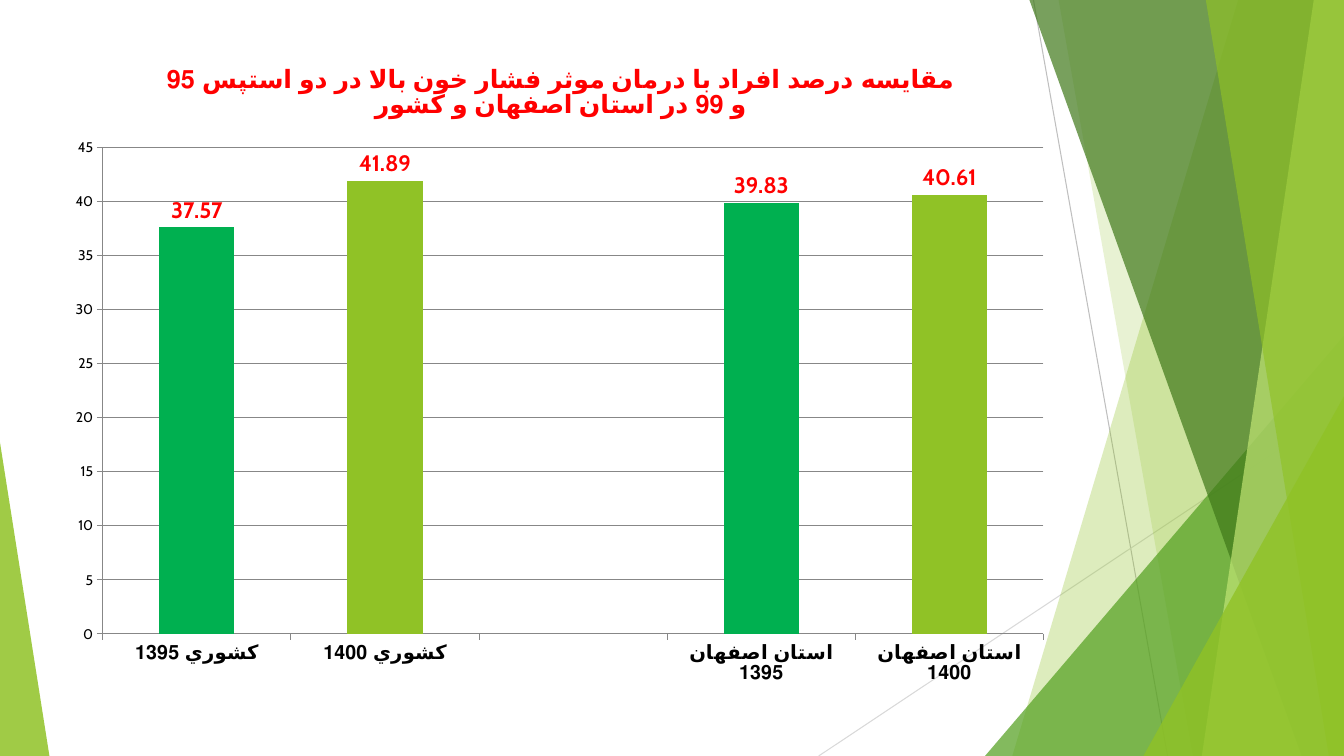
from lxml import etree
from pptx import Presentation
from pptx import util as u
from pptx.chart.data import CategoryChartData
from pptx.dml.color import RGBColor
from pptx.enum import chart as charts, shapes
from pptx.oxml import parse_xml
from pptx.oxml.ns import nsdecls, qn

LIME = RGBColor(0x90, 0xC2, 0x26)
PALE_LIME = RGBColor(0xC0, 0xE4, 0x74)
LEAF = RGBColor(0x54, 0xA0, 0x21)
DARK_LEAF = RGBColor(0x3F, 0x78, 0x19)
GREEN = RGBColor(0x00, 0xB0, 0x50)
RED = RGBColor(0xFF, 0x00, 0x00)
BLACK = RGBColor(0x00, 0x00, 0x00)
AXIS_GRAY = RGBColor(0x87, 0x87, 0x87)
GRAY = RGBColor(0xBF, 0xBF, 0xBF)
LIGHT_GRAY = RGBColor(0xD9, 0xD9, 0xD9)
FONT = "Cabin"
WIDTH, HEIGHT = 13.33, 7.5

TITLE = "مقايسه درصد افراد با درمان موثر فشار خون بالا در دو استپس 95 و 99 در استان اصفهان و کشور"
RATES = {
    "کشوري 1395": 37.57,
    "کشوري 1400": 41.89,
    "": None,
    "استان اصفهان 1395": 39.83,
    "استان اصفهان 1400": 40.61,
}


def format_font(font, size, color=BLACK, bold=False):
    font.name = FONT
    font.size = u.Pt(size)
    font.bold = bold
    font.color.rgb = color


def write_text(frame, text, **font_format):
    paragraph = frame.paragraphs[0]
    paragraph.text = text
    paragraph._p.get_or_add_pPr().set("rtl", "1")
    format_font(paragraph.runs[0].font, **font_format)


class SlideBuilder:
    def __init__(self, slide):
        self.slide = slide

    def line(self, start, end, color):
        ends = [u.Inches(value) for value in (*start, *end)]
        connector = self.slide.shapes.add_connector(shapes.MSO_CONNECTOR.STRAIGHT, *ends)
        connector.line.color.rgb = color
        connector.line.width = u.Pt(0.75)
        etree.SubElement(connector._element.spPr, qn("a:effectLst"))

    def paint(self, shape, color, opacity):
        shape.shadow.inherit = False
        shape.line.fill.background()
        shape.fill.solid()
        shape.fill.fore_color.rgb = color
        color_element = shape._element.spPr.find(".//" + qn("a:srgbClr"))
        etree.SubElement(color_element, qn("a:alpha")).set("val", str(opacity * 1000))

    def band(self, top_x, bottom_x, color, opacity):
        """Full-height band from a slanted left edge to the right side of the slide."""
        corners = [(top_x, 0), (WIDTH, 0), (WIDTH, HEIGHT), (bottom_x, HEIGHT)]
        first, *others = [(u.Inches(x), u.Inches(y)) for x, y in corners]
        builder = self.slide.shapes.build_freeform(*first)
        builder.add_line_segments(others, close=True)
        self.paint(builder.convert_to_shape(), color, opacity)

    def triangle(self, left, top, width, apex, color, opacity):
        box = [u.Inches(value) for value in (left, top, width, HEIGHT - top)]
        shape = self.slide.shapes.add_shape(shapes.MSO_SHAPE.ISOSCELES_TRIANGLE, *box)
        shape.adjustments[0] = apex
        self.paint(shape, color, opacity)

    def column_chart(self, left, top, width, height, title, rates):
        data = CategoryChartData()
        data.categories = list(rates)
        data.add_series(title, list(rates.values()))
        box = [u.Inches(value) for value in (left, top, width, height)]
        chart = self.slide.shapes.add_chart(
            charts.XL_CHART_TYPE.COLUMN_CLUSTERED, *box, data).chart
        format_font(chart.font, 10)
        chart.has_legend = False
        chart.has_title = True
        chart.chart_title.include_in_layout = False
        write_text(chart.chart_title.text_frame, title, size=18, color=RED, bold=True)
        self.style_axes(chart)
        self.style_columns(chart.plots[0])
        self.place_plot(chart, x=0.046, y=0.16, w=0.933, h=0.743)

    def style_axes(self, chart):
        values = chart.value_axis
        values.minimum_scale, values.maximum_scale, values.major_unit = 0, 45, 5
        values.has_major_gridlines = True
        values.major_gridlines.format.line.color.rgb = AXIS_GRAY
        for axis in (values, chart.category_axis):
            axis.major_tick_mark = charts.XL_TICK_MARK.OUTSIDE
            axis.format.line.color.rgb = AXIS_GRAY
        format_font(values.tick_labels.font, 10)
        format_font(chart.category_axis.tick_labels.font, 14, bold=True)

    def style_columns(self, plot):
        plot.gap_width = 150
        plot.vary_by_categories = False
        series = plot.series[0]
        series.format.fill.solid()
        series.format.fill.fore_color.rgb = LIME
        for index in (0, 3):
            fill = series.points[index].format.fill
            fill.solid()
            fill.fore_color.rgb = GREEN
        labels = series.data_labels
        labels.show_value = True
        labels.position = charts.XL_LABEL_POSITION.OUTSIDE_END
        format_font(labels.font, 16, RED, bold=True)

    def place_plot(self, chart, **fractions):
        area = chart._chartSpace.chart.plotArea
        for layout in area.findall(qn("c:layout")):
            area.remove(layout)
        sizes = "".join(f'<c:{key} val="{value}"/>' for key, value in fractions.items())
        area.insert(0, parse_xml(
            f'<c:layout {nsdecls("c")}><c:manualLayout><c:layoutTarget val="inner"/>'
            f'<c:xMode val="edge"/><c:yMode val="edge"/>{sizes}</c:manualLayout></c:layout>'))


def main():
    presentation = Presentation()
    presentation.slide_width = u.Inches(WIDTH)
    presentation.slide_height = u.Inches(HEIGHT)
    builder = SlideBuilder(presentation.slides.add_slide(presentation.slide_layouts[6]))

    # Thin lines behind the facets
    builder.line((10.25, 0), (11.58, HEIGHT), GRAY)
    builder.line((WIDTH, 4.03), (8.12, HEIGHT), LIGHT_GRAY)

    # Green facets, back to front
    builder.band(12.28, 10.04, LIME, 30)
    builder.band(10.5, 11.83, LIME, 20)
    builder.triangle(9.77, 3.33, 3.56, 1, LEAF, 72)
    builder.band(10.21, 12.91, DARK_LEAF, 70)
    builder.band(13.03, 11.92, PALE_LIME, 70)
    builder.band(11.96, 13.18, LIME, 65)
    builder.triangle(11.34, 3.93, 1.99, 1, LIME, 80)
    builder.triangle(0, 4.39, 0.49, 0, LIME, 85)

    # Treatment rates
    builder.column_chart(0.56, 0.42, 10, 6.5, TITLE, RATES)

    presentation.save("out.pptx")


if __name__ == "__main__":
    main()
